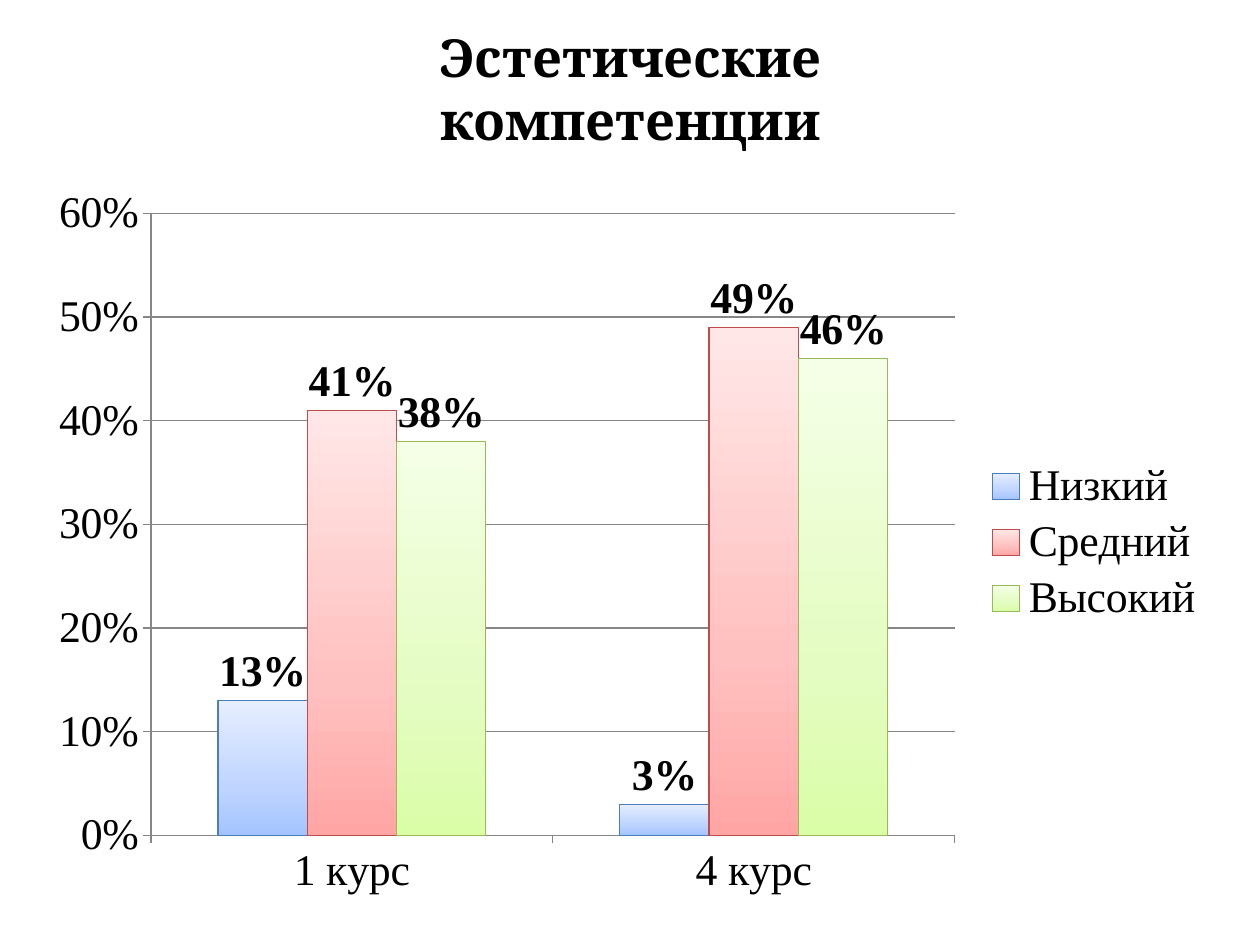
"""Build a slide with a column chart of aesthetic competence levels."""
from lxml.etree import SubElement
from pptx import Presentation
from pptx.chart.data import CategoryChartData
from pptx.dml.color import RGBColor
from pptx.enum.chart import XL_CHART_TYPE, XL_LABEL_POSITION, XL_LEGEND_POSITION, XL_TICK_MARK
from pptx.enum.text import MSO_ANCHOR, PP_ALIGN
from pptx.oxml.ns import qn
from pptx.util import Inches, Pt

BLACK = RGBColor(0, 0, 0)
WHITE = RGBColor(255, 255, 255)
GRAY = RGBColor(0x86, 0x86, 0x86)
BLUE = RGBColor(0x4B, 0x7E, 0xBC)
RED = RGBColor(0xBF, 0x4C, 0x48)
GREEN = RGBColor(0x98, 0xB9, 0x55)
BLUES = [RGBColor.from_string(c) for c in ("A4C4FF", "BFD4FF", "E6EEFF")]
REDS = [RGBColor.from_string(c) for c in ("FFA6A5", "FFC0BF", "FFE7E7")]
GREENS = [RGBColor.from_string(c) for c in ("DAFDA7", "E4FCC2", "F5FFE7")]

TITLE = ["Эстетические", "компетенции"]
YEARS = ["1 курс", "4 курс"]
LEVELS = [
    ("Низкий ", (0.13, 0.03), BLUE, BLUES),
    ("Средний ", (0.41, 0.49), RED, REDS),
    ("Высокий", (0.38, 0.46), GREEN, GREENS),
]
STOPS = (0, 35, 100)
LEFT, WIDTH = Inches(0.28), Inches(9.45)


def add_tint(node, color, alpha=100):
    tint = SubElement(node, qn("a:srgbClr"), val=str(color))
    if alpha < 100:
        SubElement(tint, qn("a:alpha"), val=str(alpha * 1000))


def shade(bar, colors):
    props = bar._element.get_or_add_spPr()
    grad = SubElement(props, qn("a:gradFill"), rotWithShape="1")
    stops = SubElement(grad, qn("a:gsLst"))
    for pos, color in zip(STOPS, colors):
        add_tint(SubElement(stops, qn("a:gs"), pos=str(pos * 1000)), color)
    SubElement(grad, qn("a:lin"), ang=str(270 * 60000), scaled="1")
    props.insert(0, grad)


def add_chart(slide):
    data = CategoryChartData(number_format="0%")
    data.categories = YEARS
    for name, vals, _, _ in LEVELS:
        data.add_series(name, vals)
    chart = slide.shapes.add_chart(
        XL_CHART_TYPE.COLUMN_CLUSTERED, LEFT, Inches(1.39), WIDTH, Inches(5.83), data
    ).chart
    chart.has_title = False
    chart.font.name, chart.font.size = "Times New Roman", Pt(25)
    chart.font.color.rgb = BLACK
    chart.has_legend = True
    chart.legend.position = XL_LEGEND_POSITION.RIGHT
    chart.legend.include_in_layout = False
    root = chart._chartSpace
    props = SubElement(root, qn("c:spPr"))
    add_tint(SubElement(props, qn("a:solidFill")), WHITE, 50)
    SubElement(SubElement(props, qn("a:ln")), qn("a:noFill"))
    root.find(qn("c:chart")).addnext(props)
    for axis in (chart.category_axis, chart.value_axis):
        axis.major_tick_mark = XL_TICK_MARK.OUTSIDE
        axis.format.line.color.rgb = GRAY
        axis.format.line.width = Pt(0.75)
    scale = chart.value_axis
    scale.minimum_scale, scale.maximum_scale, scale.major_unit = 0, 0.6, 0.1
    scale.tick_labels.number_format = "0%"
    scale.tick_labels.number_format_is_linked = False
    scale.has_major_gridlines = True
    scale.major_gridlines.format.line.color.rgb = GRAY
    scale.major_gridlines.format.line.width = Pt(0.75)
    plot = chart.plots[0]
    plot.gap_width, plot.overlap = 150, 0
    plot.vary_by_categories = False
    for bar, (_, _, edge, colors) in zip(plot.series, LEVELS):
        bar.format.line.color.rgb = edge
        bar.format.line.width = Pt(0.75)
        shade(bar, colors)
        labels = bar.data_labels
        labels.show_value = True
        labels.number_format, labels.number_format_is_linked = "0%", False
        labels.position = XL_LABEL_POSITION.OUTSIDE_END
        labels.font.bold, labels.font.size = True, Pt(25)
        labels.font.name = "Times New Roman"
        labels.font.color.rgb = BLACK


def add_title(slide):
    box = slide.shapes.add_textbox(LEFT, Inches(0.15), WIDTH, Inches(1.11))
    box.fill.solid()
    box.fill.fore_color.rgb = WHITE
    tint = box._element.spPr.find(".//" + qn("a:srgbClr"))
    SubElement(tint, qn("a:alpha"), val="70000")
    frame = box.text_frame
    frame.word_wrap = True
    frame.vertical_anchor = MSO_ANCHOR.TOP
    for num, line in enumerate(TITLE):
        para = frame.add_paragraph() if num else frame.paragraphs[0]
        para.alignment = PP_ALIGN.CENTER
        run = para.add_run()
        run.text = line
        run.font.name, run.font.size, run.font.bold = "Cambria", Pt(30), True
        run.font.color.rgb = BLACK


def main():
    deck = Presentation()
    deck.slide_width, deck.slide_height = Inches(10), Inches(7.5)
    slide = deck.slides.add_slide(deck.slide_layouts[6])
    add_chart(slide)
    add_title(slide)
    deck.save("out.pptx")


if __name__ == "__main__":
    main()
